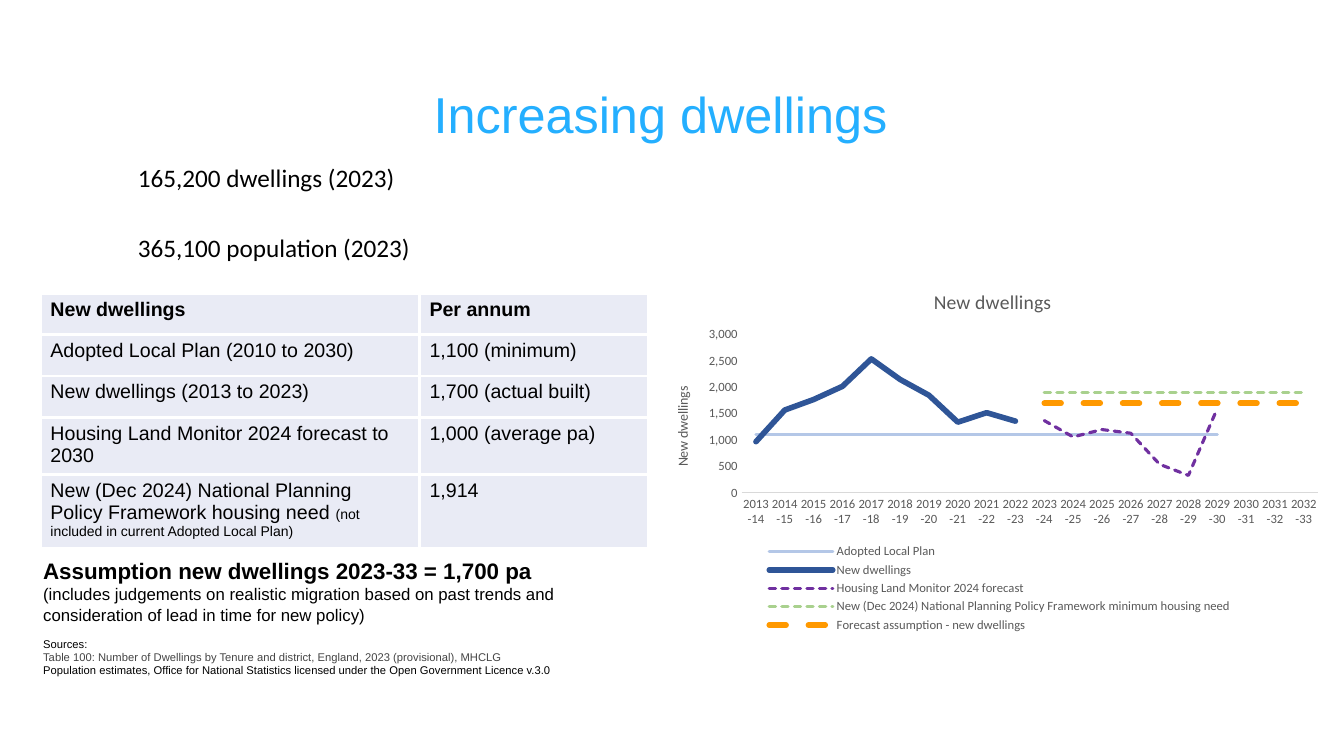
"""Build the 'Increasing dwellings' slide with a table and a line chart."""
from lxml import etree
from pptx import Presentation
from pptx.chart.data import CategoryChartData
from pptx.dml.color import RGBColor
from pptx.enum.chart import XL_CHART_TYPE, XL_LEGEND_POSITION, XL_MARKER_STYLE, XL_TICK_MARK
from pptx.enum.dml import MSO_LINE
from pptx.enum.text import MSO_ANCHOR, PP_ALIGN
from pptx.oxml.ns import qn
from pptx.util import Inches, Pt

LINE = XL_CHART_TYPE.LINE
BOTTOM = XL_LEGEND_POSITION.BOTTOM
NO_MARKER = XL_MARKER_STYLE.NONE
NO_TICK = XL_TICK_MARK.NONE
SHORT_DASH = MSO_LINE.SQUARE_DOT
DASH = MSO_LINE.DASH
ANCHOR_BOTTOM = MSO_ANCHOR.BOTTOM
LEFT = PP_ALIGN.LEFT

COLORS = {
    "title": "24AFFF", "text": "000000", "source": "444444", "cell": "E9EBF5",
    "border": "FFFFFF", "label": "595959", "axis": "D9D9D9", "plan": "B4C7E7",
    "built": "2F5597", "monitor": "7030A0", "need": "A9D18E", "forecast": "FF9900",
}


def style_font(font, size, color="text", name="Arial", bold=False):
    font.name, font.size, font.bold = name, Pt(size), bold
    font.color.rgb = RGBColor.from_string(COLORS[color])


def place_in_chart(parent, index, x, y, w, h):
    for old in parent.findall(qn("c:layout")):
        parent.remove(old)
    layout = etree.Element(qn("c:layout"))
    manual = etree.SubElement(layout, qn("c:manualLayout"))
    if parent.tag == qn("c:plotArea"):
        etree.SubElement(manual, qn("c:layoutTarget")).set("val", "inner")
    for tag in ("xMode", "yMode"):
        etree.SubElement(manual, qn(f"c:{tag}")).set("val", "edge")
    for tag, value in zip("xywh", (x, y, w, h)):
        etree.SubElement(manual, qn(f"c:{tag}")).set("val", str(value))
    parent.insert(index, layout)


prs = Presentation()
prs.slide_width, prs.slide_height = Inches(13.33), Inches(7.5)
s = prs.slides.add_slide(prs.slide_layouts[5])

title = s.shapes.title
title.left, title.top, title.width, title.height = Inches(4.2), Inches(0.8), Inches(5.14), Inches(0.68)
tf = title.text_frame
tf.text = "Increasing dwellings"
tf.vertical_anchor = ANCHOR_BOTTOM
p = tf.paragraphs[0]
p.alignment = LEFT
p.line_spacing = 0.9
style_font(p.font, 36, "title")

text_boxes = [
    (1.27, 1.56, 3.04, 0.4, [("165,200 dwellings (2023)", 18, "text", "Calibri", False)]),
    (1.27, 2.26, 3.04, 0.71, [("365,100 population (2023)", 18, "text", "Calibri", False)]),
    (0.33, 5.48, 6.27, 0.77, [
        ("Assumption new dwellings 2023-33 = 1,700 pa", 16, "text", "Arial", True),
        ("(includes judgements on realistic migration based on past trends and "
         "consideration of lead in time for new policy)", 12, "text", "Arial", False),
    ]),
    (0.33, 6.27, 10.96, 0.64, [
        ("Sources:", 8, "text", "Arial", False),
        ("Table 100: Number of Dwellings by Tenure and district, England, 2023 (provisional), MHCLG",
         8, "source", "Arial", False),
        ("Population estimates, Office for National Statistics licensed under the "
         "Open Government Licence v.3.0", 8, "text", "Arial", False),
    ]),
]
for x, y, w, h, lines in text_boxes:
    tf = s.shapes.add_textbox(Inches(x), Inches(y), Inches(w), Inches(h)).text_frame
    tf.word_wrap = True
    for i, (text, *style) in enumerate(lines):
        p = tf.add_paragraph() if i else tf.paragraphs[0]
        p.text = text
        style_font(p.font, *style)

rows = [
    ("New dwellings", "Per annum"),
    ("Adopted Local Plan (2010 to 2030)", "1,100 (minimum)"),
    ("New dwellings (2013 to 2023)", "1,700 (actual built)"),
    ("Housing Land Monitor 2024 forecast to 2030", "1,000 (average pa)"),
    ("New (Dec 2024) National Planning Policy Framework housing need ", "1,914"),
]
table = s.shapes.add_table(len(rows), 2, Inches(0.4), Inches(2.91), Inches(6.03), Inches(2.05)).table
table.first_row = table.horz_banding = False
table.columns[0].width, table.columns[1].width = Inches(3.76), Inches(2.27)
for i, row in enumerate(rows):
    table.rows[i].height = Inches(0.41)
    for j, text in enumerate(row):
        cell = table.cell(i, j)
        cell.text = text
        style_font(cell.text_frame.paragraphs[0].font, 14, bold=i == 0)
        cell.fill.solid()
        cell.fill.fore_color.rgb = RGBColor.from_string(COLORS["cell"])
        tc_pr = cell._tc.get_or_add_tcPr()
        for k, side in enumerate(("lnL", "lnR", "lnT", "lnB")):
            ln = etree.Element(qn(f"a:{side}"), w=str(Pt(2.25)))
            fill = etree.SubElement(ln, qn("a:solidFill"))
            etree.SubElement(fill, qn("a:srgbClr")).set("val", COLORS["border"])
            tc_pr.insert(k, ln)
r = table.cell(4, 0).text_frame.paragraphs[0].add_run()
r.text = "(not included in current Adopted Local Plan)"
r.font.size = Pt(10)

series = [
    ("Adopted Local Plan", [1100] * 17 + [None] * 3, "plan", 2.25, None),
    ("New dwellings", [970, 1570, 1770, 2020, 2540, 2150, 1850, 1340, 1520, 1360] + [None] * 10,
     "built", 4, None),
    ("Housing Land Monitor 2024 forecast ",
     [None] * 10 + [1370, 1060, 1200, 1130, 540, 330, 1600] + [None] * 3, "monitor", 2.25, SHORT_DASH),
    ("New (Dec 2024) National Planning Policy Framework minimum housing need",
     [None] * 10 + [1910] * 10, "need", 2.25, SHORT_DASH),
    ("Forecast assumption - new dwellings", [None] * 10 + [1700] * 10, "forecast", 4, DASH),
]
data = CategoryChartData(number_format="#,##0")
data.categories = [f"{year}-{year % 100 + 1}" for year in range(2013, 2033)]
for name, values, *_ in series:
    data.add_series(name, values)
chart = s.shapes.add_chart(LINE, Inches(6.48), Inches(2.7), Inches(6.73), Inches(3.65), data).chart
style_font(chart.font, 10, name="Calibri")
chart.plots[0].vary_by_categories = False
for ser, (_, _, color, width, dash) in zip(chart.plots[0].series, series):
    ser.smooth = False
    ser.marker.style = NO_MARKER
    line = ser.format.line
    line.color.rgb = RGBColor.from_string(COLORS[color])
    line.width = Pt(width)
    if dash:
        line.dash_style = dash
    ser._element.find(qn("c:spPr")).find(qn("a:ln")).set("cap", "rnd")

cat_axis, val_axis = chart.category_axis, chart.value_axis
for axis in (cat_axis, val_axis):
    axis.major_tick_mark = axis.minor_tick_mark = NO_TICK
    axis.has_major_gridlines = False
    style_font(axis.tick_labels.font, 9, "label", "Calibri")
cat_axis.format.line.color.rgb = RGBColor.from_string(COLORS["axis"])
cat_axis.format.line.width = Pt(0.75)
val_axis.format.line.fill.background()
val_axis.minimum_scale, val_axis.maximum_scale, val_axis.major_unit = 0, 3000, 500
val_axis.tick_labels.number_format = "#,##0"
val_axis.tick_labels.number_format_is_linked = False

chart.has_title = val_axis.has_title = True
for heading, size in ((chart.chart_title, 14), (val_axis.axis_title, 10)):
    p = heading.text_frame.paragraphs[0]
    p.text = "New dwellings"
    style_font(p.font, size, "label", "Calibri")

chart.has_legend = True
legend = chart.legend
legend.position = BOTTOM
legend.include_in_layout = False
style_font(legend.font, 9, "label", "Calibri")
place_in_chart(legend._element, 1, 0.15, 0.73, 0.72, 0.26)
place_in_chart(chart._chartSpace.chart.plotArea, 0, 0.13, 0.17, 0.85, 0.43)

prs.save("out.pptx")
